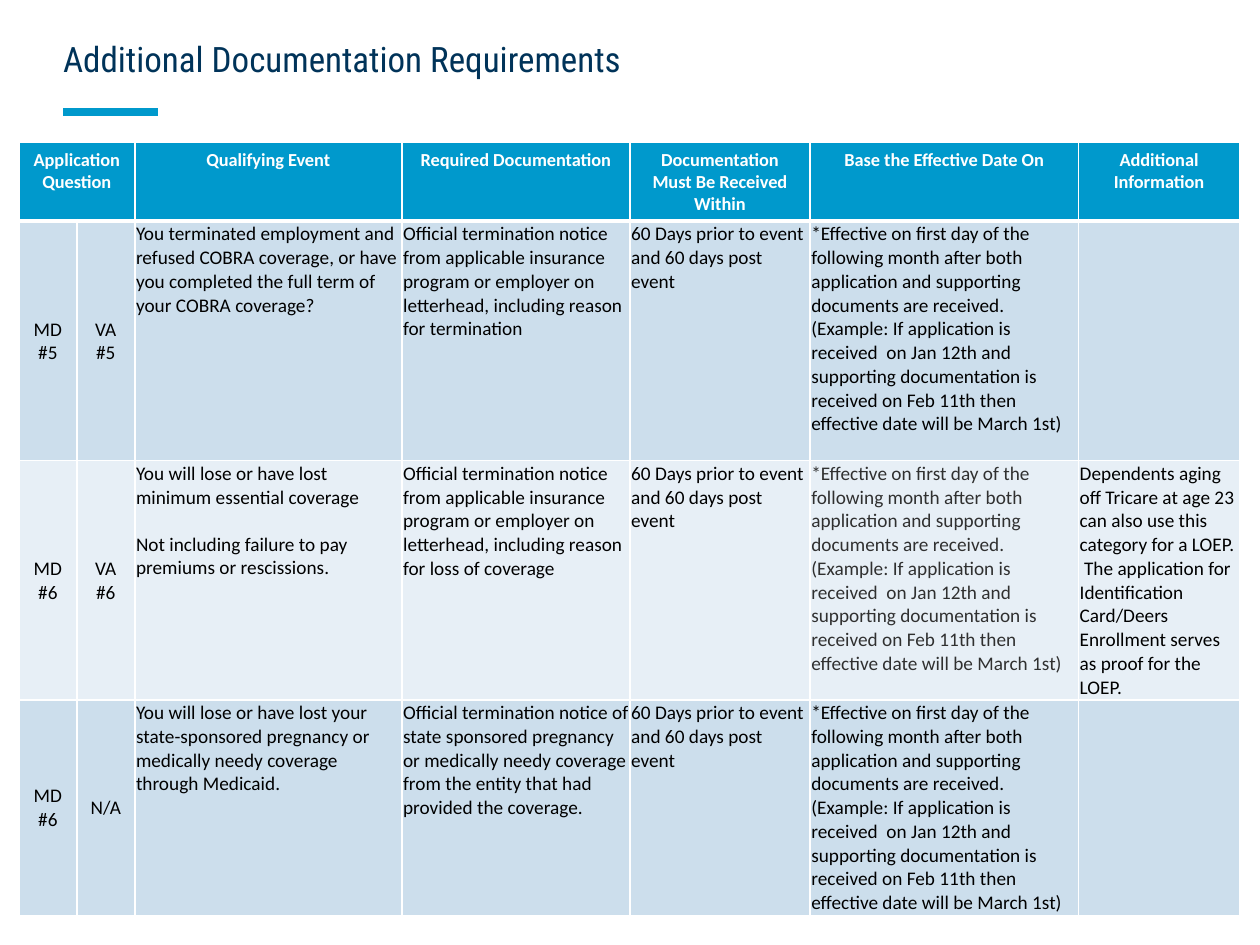
import pptx
import pptx.dml.color
import pptx.enum.shapes
import pptx.enum.text
import pptx.oxml
import pptx.oxml.ns
import pptx.util
from pptx.util import Inches

COLORS = {
    "accent": "0099CC", "title": "003359", "white": "FFFFFF", "text": "000000",
    "soft_text": "303030", "band_dark": "CCDEEC", "band_light": "E7EFF6",
}
ALIGN = pptx.enum.text.PP_ALIGN
ANCHOR = pptx.enum.text.MSO_ANCHOR

COLUMN_WIDTHS = [0.46, 0.46, 2.12, 1.81, 1.43, 2.13, 1.28]
ROW_HEIGHTS = [0.62, 1.9, 1.9, 1.71]
HEADERS = ["Application Question", "", "Qualifying Event", "Required Documentation",
           "Documentation Must Be Received Within", "Base the Effective Date On",
           "Additional Information"]
DEADLINE = "60 Days prior to event and 60 days post event"
EFFECTIVE_DATE = (
    "*Effective on first day of the following month after both application and "
    "supporting documents are received.  (Example: If application is received  on "
    "Jan 12th and supporting documentation is received on Feb 11th then effective "
    "date will be March 1st)")
NOTICE = ("Official termination notice from applicable insurance program or employer "
          "on letterhead, including reason for ")
EVENTS = [
    ["MD\n#5", "VA\n#5",
     "You terminated employment and refused COBRA coverage, or have you completed "
     "the full term of your COBRA coverage?",
     NOTICE + "termination", DEADLINE, EFFECTIVE_DATE, ""],
    ["MD\n#6", "VA\n#6",
     "You will lose or have lost minimum essential coverage\n"
     "Not including failure to pay premiums or rescissions.",
     NOTICE + "loss of coverage", DEADLINE, EFFECTIVE_DATE,
     "Dependents aging off Tricare at age 23 can also use this category for a LOEP.  "
     "The application for Identification Card/Deers Enrollment serves as proof for "
     "the LOEP."],
    ["MD\n#6", "N/A",
     "You will lose or have lost your state-sponsored pregnancy or medically needy "
     "coverage through Medicaid.",
     "Official termination notice of state sponsored pregnancy or medically needy "
     "coverage from the entity that had provided the coverage.",
     DEADLINE, EFFECTIVE_DATE, ""],
]


def rgb(name):
    return pptx.dml.color.RGBColor.from_string(COLORS[name])


def write_text(frame, text, size=11, font="Calibri", color="text", bold=False,
               align=ALIGN.LEFT, line_spacing=None, gap=0):
    """Write each line of text as a paragraph, with gap points between them."""
    frame.word_wrap = True
    for index, line in enumerate(text.split("\n")):
        para = frame.add_paragraph() if index else frame.paragraphs[0]
        para.alignment = align
        para.line_spacing = line_spacing
        if index:
            para.space_before = pptx.util.Pt(gap)
        span = para.add_run()
        span.text = line
        span.font.size = pptx.util.Pt(size)
        span.font.name = font
        span.font.bold = bold
        span.font.color.rgb = rgb(color)


def add_title(slide, text):
    box = slide.shapes.add_textbox(Inches(0.5), 0, Inches(6.75), Inches(0.87))
    frame = box.text_frame
    frame.margin_left = frame.margin_right = 0
    frame.margin_top, frame.margin_bottom = Inches(0.3), Inches(0.2)
    frame.vertical_anchor = ANCHOR.MIDDLE
    write_text(frame, text, size=20, font="Roboto Condensed", color="title",
               line_spacing=0.9)


def add_title_rule(slide):
    rule = slide.shapes.add_connector(
        pptx.enum.shapes.MSO_CONNECTOR.STRAIGHT,
        Inches(0.5), Inches(0.89), Inches(1.25), Inches(0.89))
    rule.line.color.rgb = rgb("accent")
    rule.line.width = pptx.util.Pt(4.5)
    effects = pptx.oxml.parse_xml(f'<a:effectLst {pptx.oxml.ns.nsdecls("a")}/>')
    rule._element.spPr.append(effects)


def style_cell(cell, fill, top=1, bottom=1):
    """Fill the cell and give it white borders; top and bottom are in points."""
    cell.fill.solid()
    cell.fill.fore_color.rgb = rgb(fill)
    properties = cell._tc.get_or_add_tcPr()
    for index, (side, width) in enumerate(
            [("L", 1), ("R", 1), ("T", top), ("B", bottom)]):
        border = pptx.oxml.parse_xml(
            f'<a:ln{side} {pptx.oxml.ns.nsdecls("a")} w="{pptx.util.Pt(width)}">'
            f'<a:solidFill><a:srgbClr val="{COLORS["white"]}"/></a:solidFill>'
            f'</a:ln{side}>')
        properties.insert(index, border)


def fill_header(table):
    for column, text in enumerate(HEADERS):
        cell = table.cell(0, column)
        style_cell(cell, "accent", bottom=3)
        if text:
            write_text(cell.text_frame, text, size=10.5, color="white", bold=True,
                       align=ALIGN.CENTER)
    table.cell(0, 0).merge(table.cell(0, 1))


def fill_event(table, row, texts):
    light = row % 2 == 0
    for column, text in enumerate(texts):
        cell = table.cell(row, column)
        style_cell(cell, "band_light" if light else "band_dark",
                   top=3 if row == 1 else 1)
        cell.margin_left = cell.margin_right = cell.margin_top = Inches(0.01)
        cell.margin_bottom = 0
        is_question = column < 2
        cell.vertical_anchor = ANCHOR.MIDDLE if is_question else ANCHOR.TOP
        if text:
            write_text(cell.text_frame, text,
                       color="soft_text" if light and column == 5 else "text",
                       align=ALIGN.CENTER if is_question else ALIGN.LEFT,
                       gap=0 if is_question else 13.4)


def add_requirements_table(slide):
    table = slide.shapes.add_table(
        len(ROW_HEIGHTS), len(COLUMN_WIDTHS), Inches(0.15), Inches(1.13),
        Inches(sum(COLUMN_WIDTHS)), Inches(sum(ROW_HEIGHTS))).table
    for column, width in zip(table.columns, COLUMN_WIDTHS):
        column.width = Inches(width)
    for row, height in zip(table.rows, ROW_HEIGHTS):
        row.height = Inches(height)
    fill_header(table)
    for row, texts in enumerate(EVENTS, start=1):
        fill_event(table, row, texts)


def main():
    deck = pptx.Presentation()
    deck.slide_width, deck.slide_height = Inches(10), Inches(7.5)
    slide = deck.slides.add_slide(deck.slide_layouts[6])
    add_title_rule(slide)
    add_title(slide, "Additional Documentation Requirements")
    add_requirements_table(slide)
    deck.save("out.pptx")


if __name__ == "__main__":
    main()
